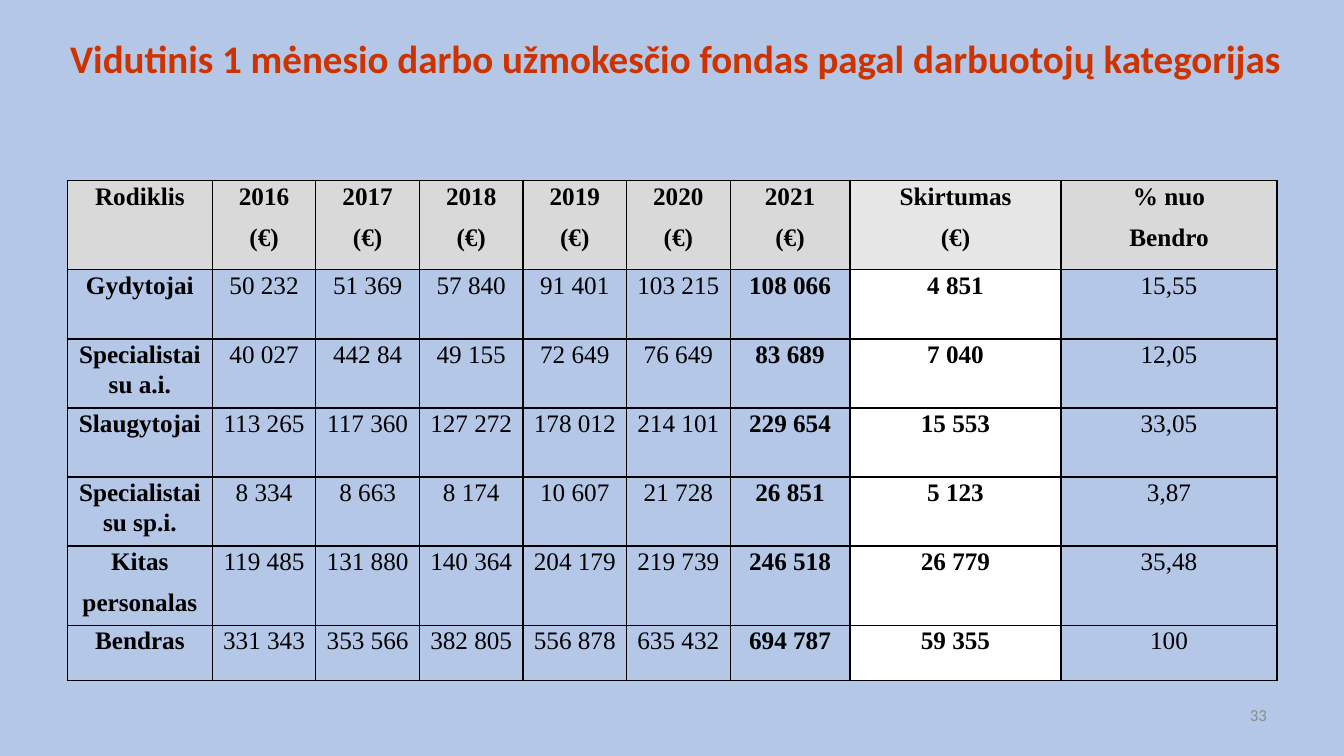
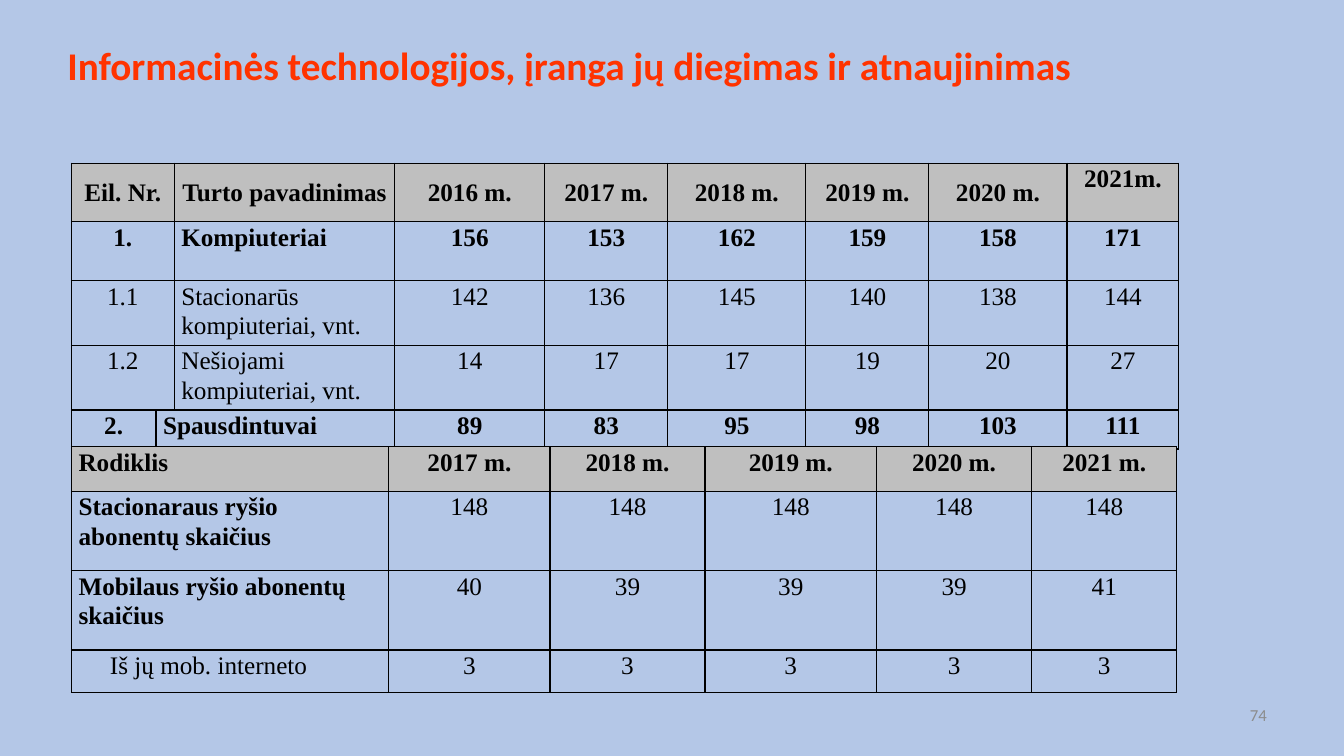
from lxml import etree
from pptx import Presentation
from pptx.dml.color import RGBColor
from pptx.enum.text import MSO_ANCHOR, PP_ALIGN
from pptx.oxml.ns import qn
from pptx.util import Cm, Pt

# Style constants
LEFT, CENTER, RIGHT = PP_ALIGN.LEFT, PP_ALIGN.CENTER, PP_ALIGN.RIGHT
TOP, MIDDLE = MSO_ANCHOR.TOP, MSO_ANCHOR.MIDDLE
BACKGROUND = RGBColor(0xB4, 0xC7, 0xE7)
DARK_RED = RGBColor(0xCC, 0x33, 0x00)
BRIGHT_RED = RGBColor(0xFF, 0x33, 0x00)
BLACK = RGBColor(0x00, 0x00, 0x00)
WHITE = RGBColor(0xFF, 0xFF, 0xFF)
LIGHT_GREY = RGBColor(0xD9, 0xD9, 0xD9)
PALE_GREY = RGBColor(0xE7, 0xE6, 0xE6)
MID_GREY = RGBColor(0xBF, 0xBF, 0xBF)
NUMBER_GREY = RGBColor(0x8C, 0x8C, 0x8C)
HEAD_FONT, TABLE_FONT = "Calibri", "Times New Roman"


class Deck:
    """Holds the shared style and the current slide."""

    def __init__(self):
        self.prs = Presentation()
        self.prs.slide_width, self.prs.slide_height = Cm(33.87), Cm(19.05)
        self.s = None

    def slide(self, number):
        self.s = self.prs.slides.add_slide(self.prs.slide_layouts[6])
        fill = self.s.background.fill
        fill.solid()
        fill.fore_color.rgb = BACKGROUND
        self.text(24.28, 17.35, 7.9, 1.32, number, 12, NUMBER_GREY, align=RIGHT)

    def run(self, p, text, font, size, color, bold):
        r = p.add_run()
        r.text = text
        r.font.name, r.font.size, r.font.bold = font, Pt(size), bold
        r.font.color.rgb = color

    def text(self, x, y, w, h, text, size, color, bold=False, align=LEFT, spacing=1.0):
        sp = self.s.shapes.add_textbox(Cm(x), Cm(y), Cm(w), Cm(h))
        tf = sp.text_frame
        tf.word_wrap, tf.vertical_anchor = True, MIDDLE
        p = tf.paragraphs[0]
        p.alignment, p.line_spacing = align, spacing
        self.run(p, text, HEAD_FONT, size, color, bold)

    def title(self, x, y, w, h, text, size, color, spacing):
        self.text(x, y, w, h, text, size, color, True, LEFT, spacing)

    def borders(self, cell):
        tc_pr = cell._tc.get_or_add_tcPr()
        for side in ("a:lnL", "a:lnR", "a:lnT", "a:lnB"):
            ln = etree.SubElement(tc_pr, qn(side), w=str(Pt(1)))
            fill = etree.SubElement(ln, qn("a:solidFill"))
            etree.SubElement(fill, qn("a:srgbClr"), val=str(BLACK))

    def cell(self, cell, text, pad, fill=None, bold=False, align=CENTER,
             anchor=TOP, indent=0):
        cell.margin_left = cell.margin_right = Cm(pad)
        cell.margin_top = cell.margin_bottom = 0
        cell.vertical_anchor = anchor
        self.borders(cell)
        if fill is None:
            cell.fill.background()
        else:
            cell.fill.solid()
            cell.fill.fore_color.rgb = fill
        if text is None:
            return
        tf = cell.text_frame
        for i, line in enumerate(text.split("\n")):
            p = tf.paragraphs[0] if i == 0 else tf.add_paragraph()
            p.alignment, p.line_spacing, p.space_after = align, 1.07, Pt(8)
            if indent:
                p._p.get_or_add_pPr().set("indent", str(Cm(indent)))
            self.run(p, line, TABLE_FONT, 18, BLACK, bold)

    def table(self, x, y, widths, heights, data, style, pad=0.0):
        """Draw a table; None in data joins a cell to the one on its left."""
        frame = self.s.shapes.add_table(len(heights), len(widths), Cm(x), Cm(y),
                                        Cm(sum(widths)), Cm(sum(heights)))
        table = frame.table
        table.first_row = table.horz_banding = False
        for column, width in zip(table.columns, widths):
            column.width = Cm(width)
        for row, height in zip(table.rows, heights):
            row.height = Cm(height)
        for r, values in enumerate(data):
            for c, value in enumerate(values):
                self.cell(table.cell(r, c), value, pad, **style(r, c))
                if value is None:
                    table.cell(r, c - 1).merge(table.cell(r, c))


# Cell rules of each table
def pay_style(r, c):
    difference = c == 7
    if r == 0:
        return {"fill": PALE_GREY if difference else LIGHT_GREY, "bold": True}
    return {"fill": WHITE if difference else None, "bold": c in (0, 6, 7)}


def equipment_style(r, c):
    if r == 0:
        return {"fill": MID_GREY, "bold": True, "anchor": TOP if c == 8 else MIDDLE}
    name = c in (1, 2)
    return {"bold": r in (1, 4), "align": LEFT if name else CENTER}


def subscriber_style(r, c):
    return {"fill": MID_GREY if r == 0 else None,
            "bold": r == 0 or (c == 0 and r < 3),
            "align": LEFT if c == 0 else CENTER,
            "indent": 0.79 if (r, c) == (3, 0) else 0}


# Table contents
PAY = [
    ["Rodiklis", *[f"{year}\n(€)" for year in range(2016, 2022)],
     "Skirtumas\n(€)", "% nuo\nBendro"],
    ["Gydytojai", "50 232", "51 369", "57 840", "91 401", "103 215",
     "108 066", "4 851", "15,55"],
    ["Specialistai su a.i.", "40 027", "442 84", "49 155", "72 649", "76 649",
     "83 689", "7 040", "12,05"],
    ["Slaugytojai", "113 265", "117 360", "127 272", "178 012", "214 101",
     "229 654", "15 553", "33,05"],
    ["Specialistai su sp.i.", "8 334", "8 663", "8 174", "10 607", "21 728",
     "26 851", "5 123", "3,87"],
    ["Kitas\npersonalas", "119 485", "131 880", "140 364", "204 179", "219 739",
     "246 518", "26 779", "35,48"],
    ["Bendras", "331 343", "353 566", "382 805", "556 878", "635 432",
     "694 787", "59 355", "100"],
]
EQUIPMENT = [
    ["Eil. Nr.", None, "Turto pavadinimas",
     *[f"{year} m." for year in range(2016, 2021)], "2021m."],
    ["1.", None, "Kompiuteriai", "156", "153", "162", "159", "158", "171"],
    ["1.1", None, "Stacionarūs kompiuteriai, vnt.",
     "142", "136", "145", "140", "138", "144"],
    ["1.2", None, "Nešiojami kompiuteriai, vnt.",
     "14", "17", "17", "19", "20", "27"],
    ["2.", "Spausdintuvai", None, "89", "83", "95", "98", "103", "111"],
]
SUBSCRIBERS = [
    ["Rodiklis", *[f"{year} m." for year in range(2017, 2022)]],
    ["Stacionaraus ryšio abonentų skaičius", *["148"] * 5],
    ["Mobilaus ryšio abonentų skaičius", "40", "39", "39", "39", "41"],
    ["Iš jų mob. interneto", *["3"] * 5],
]


def main():
    deck = Deck()

    # Monthly pay by staff category
    deck.slide("33")
    deck.title(1.52, 0.41, 31.22, 2.26,
               "Vidutinis 1 mėnesio darbo užmokesčio fondas pagal darbuotojų kategorijas",
               27.9, DARK_RED, 0.9)
    deck.table(1.7, 4.55, [3.65, *[2.61] * 5, 3.02, 5.32, 5.44],
               [2.25, *[1.74] * 4, 2, 1.39], PAY, pay_style)

    # Equipment and telephone subscribers
    deck.slide("74")
    deck.title(1.45, 0.03, 25.98, 3.18,
               "Informacinės technologijos, įranga jų diegimas ir atnaujinimas",
               28, BRIGHT_RED, Pt(34))
    deck.table(1.8, 4.11, [2.13, 0.44, 5.56, 3.78, 3.1, 3.48, 3.1, 3.48, 2.82],
               [*[1.48] * 4, 0.98], EQUIPMENT, equipment_style, pad=0.18)
    deck.table(1.8, 11.26, [8, 4.06, 3.91, 4.32, 3.91, 3.66],
               [1.12, 2, 2, 1.07], SUBSCRIBERS, subscriber_style, pad=0.18)

    deck.prs.save("out.pptx")


if __name__ == "__main__":
    main()
